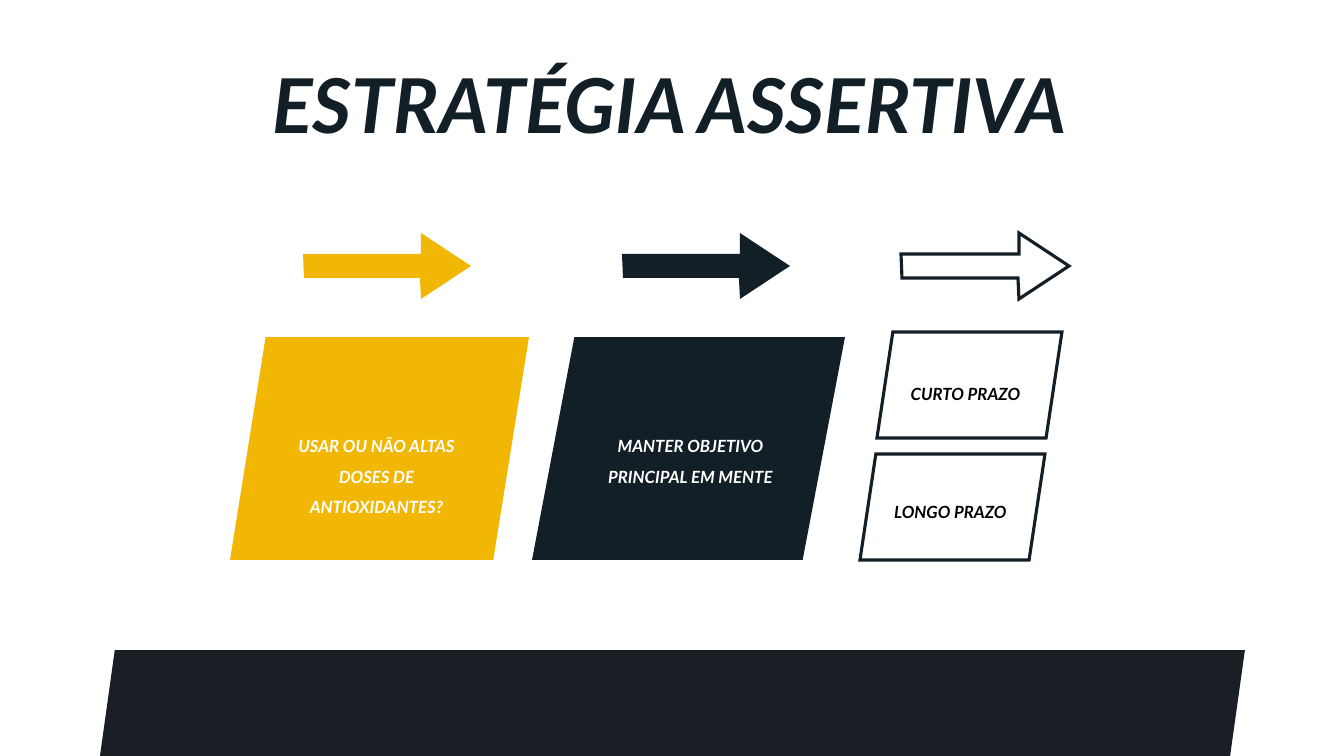
"""Build the "Estratégia assertiva" slide with three arrows and four slanted panels."""
from typing import NamedTuple, Optional

import pptx
import pptx.dml.color
import pptx.enum.shapes
import pptx.enum.text
import pptx.oxml
import pptx.oxml.ns
import pptx.util

EMU_PER_PX = 914400 / 100.8
COLORS = {
    "gold": "F2B705",
    "navy": "131F27",
    "slate": "1A1F26",
    "white": "FFFFFF",
    "black": "000000",
}
FONT = {"name": "Lato", "bold": True, "italic": True}
FRAME = {
    "word_wrap": True,
    "auto_size": pptx.enum.text.MSO_AUTO_SIZE.SHAPE_TO_FIT_TEXT,
    "vertical_anchor": pptx.enum.text.MSO_ANCHOR.TOP,
}
ARROW_TOP = 233
ARROW_POINTS = [(0, 21), (118, 21), (118, 0), (168, 33), (118, 66), (117, 45), (1, 45)]


class Arrow(NamedTuple):
    left: int
    fill: Optional[str]


class Panel(NamedTuple):
    left: int
    top: int
    width: int
    height: int
    slant: float
    fill: Optional[str]


class Caption(NamedTuple):
    text: str
    left: int
    top: int
    height: int
    color: str


ARROWS = [Arrow(303, "gold"), Arrow(622, "navy"), Arrow(901, None)]
PANELS = [
    Panel(100, 650, 1145, 106, 0.14, "slate"),
    Panel(230, 337, 299, 223, 0.16, "gold"),
    Panel(532, 337, 313, 223, 0.19, "navy"),
    Panel(860, 454, 185, 106, 0.15, None),
    Panel(877, 332, 185, 106, 0.15, None),
]
CAPTION_WIDTH = 211
CAPTIONS = [
    Caption("USAR OU NÃO ALTAS DOSES DE ANTIOXIDANTES?", 271, 421, 68, "white"),
    Caption("MANTER OBJETIVO PRINCIPAL EM MENTE", 585, 421, 68, "white"),
    Caption("CURTO PRAZO", 860, 369, 36, "black"),
    Caption("LONGO PRAZO", 845, 487, 36, "black"),
]


def px(length: int) -> pptx.util.Emu:
    """Turn whole pixels into EMU."""
    return pptx.util.Emu(round(length * EMU_PER_PX))


def rgb(color: str) -> pptx.dml.color.RGBColor:
    """Look up a named colour."""
    return pptx.dml.color.RGBColor.from_string(COLORS[color])


def paint(shape, fill: Optional[str]) -> None:
    """Fill a shape, or outline it in navy when it has no fill."""
    shape.shadow.inherit = False
    if fill:
        shape.fill.solid()
        shape.fill.fore_color.rgb = rgb(fill)
        shape.line.fill.background()
        return
    shape.fill.background()
    shape.line.color.rgb = rgb("navy")
    shape.line.width = pptx.util.Pt(2.25)
    outline = shape.element.spPr.find(pptx.oxml.ns.qn("a:ln"))
    namespace = pptx.oxml.ns.nsdecls("a")
    outline.append(pptx.oxml.parse_xml(f'<a:miter {namespace} lim="800000"/>'))


def write(box, text: str, size: int, color: str, spacing: float) -> None:
    """Put one centred, formatted paragraph in a box."""
    frame = box.text_frame
    for name, value in FRAME.items():
        setattr(frame, name, value)
    para = frame.paragraphs[0]
    para.alignment = pptx.enum.text.PP_ALIGN.CENTER
    para.line_spacing = spacing
    span = para.add_run()
    span.text = text
    for name, value in {**FONT, "size": pptx.util.Pt(size)}.items():
        setattr(span.font, name, value)
    span.font.color.rgb = rgb(color)


def draw_arrow(page, arrow: Arrow) -> None:
    """Draw a right-pointing arrow."""
    builder = page.shapes.build_freeform(*ARROW_POINTS[0], scale=EMU_PER_PX)
    builder.add_line_segments(ARROW_POINTS[1:], close=True)
    paint(builder.convert_to_shape(px(arrow.left), px(ARROW_TOP)), arrow.fill)


def draw_panel(page, panel: Panel) -> None:
    """Draw a slanted panel."""
    shape = page.shapes.add_shape(
        pptx.enum.shapes.MSO_SHAPE.PARALLELOGRAM,
        px(panel.left), px(panel.top), px(panel.width), px(panel.height),
    )
    shape.adjustments[0] = panel.slant
    paint(shape, panel.fill)


def draw_caption(page, caption: Caption) -> None:
    """Draw the text of a panel."""
    box = page.shapes.add_textbox(
        px(caption.left), px(caption.top), px(CAPTION_WIDTH), px(caption.height)
    )
    write(box, caption.text, 12, caption.color, 1.5)


def main() -> None:
    """Build and save the deck."""
    deck = pptx.Presentation()
    deck.slide_width, deck.slide_height = px(1344), px(756)
    page = deck.slides.add_slide(deck.slide_layouts.get_by_name("Title Only"))
    title = page.shapes.title
    place = {"left": 69, "top": 53, "width": 1201, "height": 102}
    for name, value in place.items():
        setattr(title, name, px(value))
    write(title, "ESTRATÉGIA ASSERTIVA", 54, "navy", 1.0)
    for arrow in ARROWS:
        draw_arrow(page, arrow)
    for panel in PANELS:
        draw_panel(page, panel)
    for caption in CAPTIONS:
        draw_caption(page, caption)
    deck.save("out.pptx")


if __name__ == "__main__":
    main()
